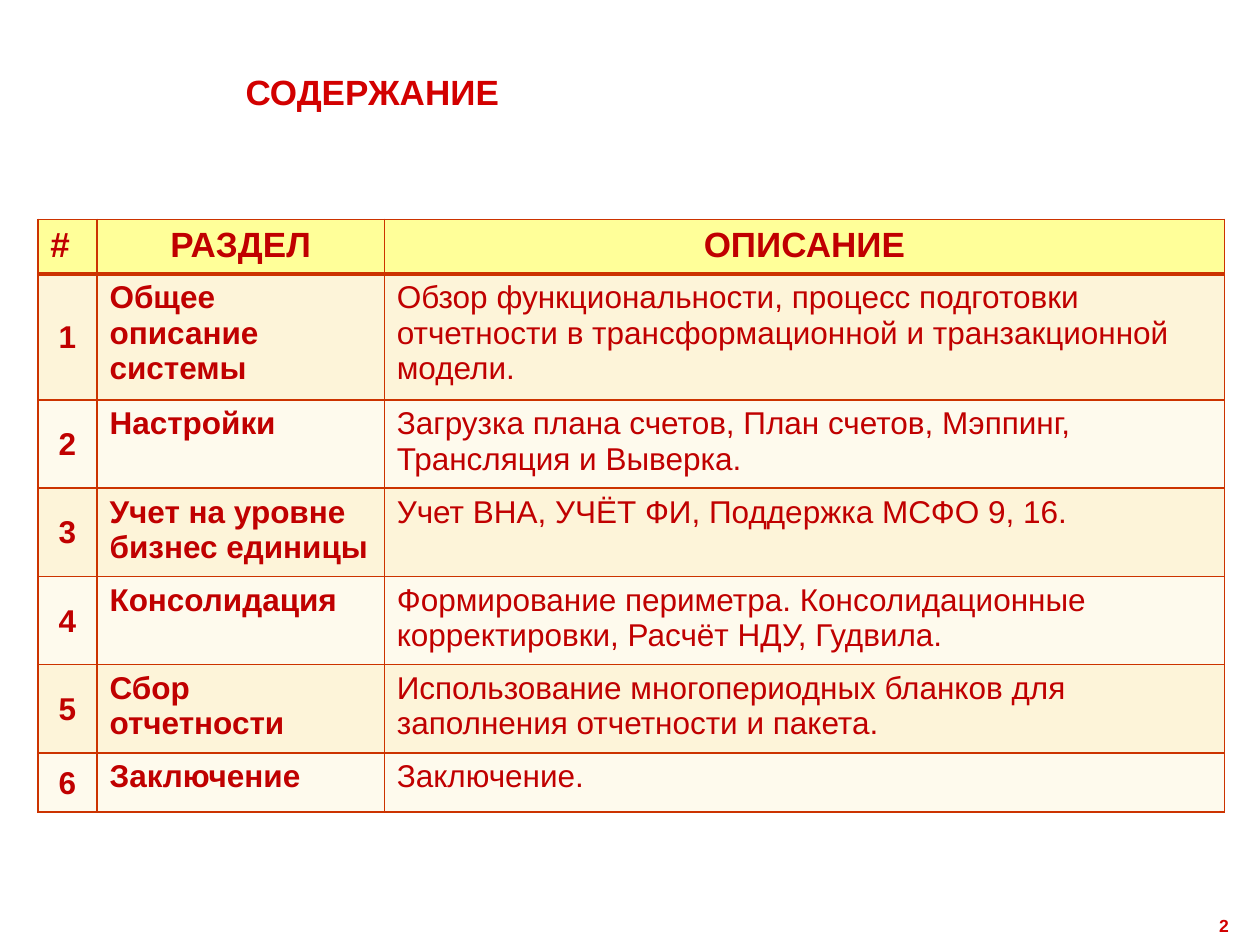
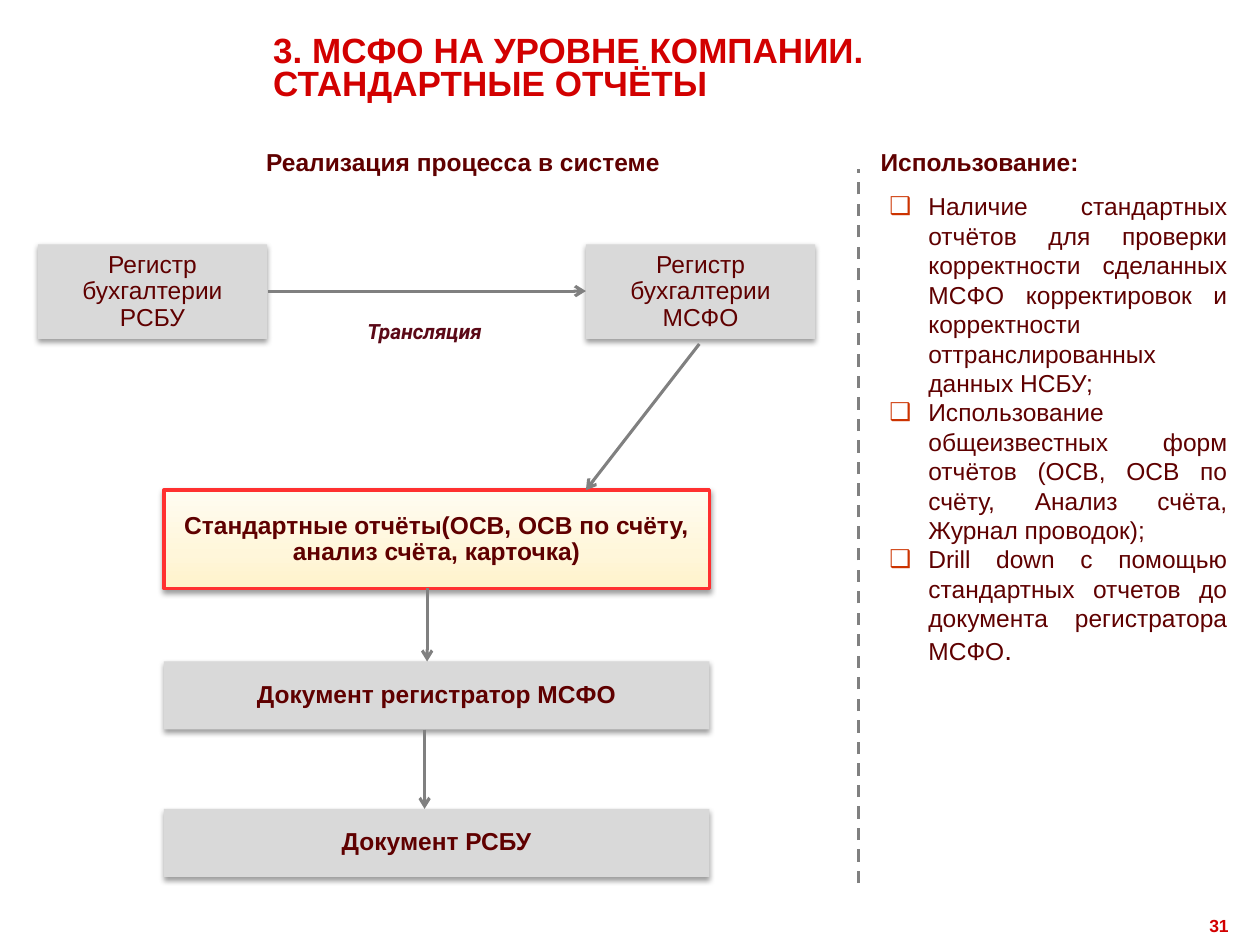
from copy import deepcopy

from lxml import etree
from pptx import Presentation
from pptx.dml.color import RGBColor
from pptx.enum.dml import MSO_LINE
from pptx.enum.shapes import MSO_CONNECTOR, MSO_SHAPE
from pptx.enum.text import MSO_ANCHOR, PP_ALIGN
from pptx.oxml.ns import qn
from pptx.util import Inches, Pt

LEFT, CENTER, RIGHT, JUSTIFY = PP_ALIGN.LEFT, PP_ALIGN.CENTER, PP_ALIGN.RIGHT, PP_ALIGN.JUSTIFY
TOP, MIDDLE = MSO_ANCHOR.TOP, MSO_ANCHOR.MIDDLE
STRAIGHT, RECTANGLE, DASH = MSO_CONNECTOR.STRAIGHT, MSO_SHAPE.RECTANGLE, MSO_LINE.DASH

RED, DARK_RED, BROWN, ORANGE = "D20000", "C00000", "5F0000", "CC3300"
GRAY, LINE_GRAY, FRAME_RED = "D9D9D9", "808080", "FF3030"
HEADER_FILL, BAND_FILLS = "FFFF99", ("FDF4D9", "FEFAED")
REPORT_GRADIENT = [(0, "FFF3CA"), (35, "FFF6DA"), (100, "FFFCF1")]

CONTENTS = {"title": "СОДЕРЖАНИЕ", "title_at": (1.85, 0.17, 5.28, 1.18), "number": "2"}
TABLE_LEFT, TABLE_TOP = 0.3, 1.74
COLUMN_WIDTHS = (0.47, 2.28, 6.67)
ROW_HEIGHTS = (0.41, 0.94, 0.66, 0.66, 0.66, 0.66, 0.47)
HEADINGS = ("#", "РАЗДЕЛ", "ОПИСАНИЕ")
SECTIONS = [
    ("Общее описание системы",
     "Обзор функциональности, процесс подготовки отчетности в трансформационной и транзакционной модели."),
    ("Настройки", "Загрузка плана счетов, План счетов, Мэппинг, Трансляция и Выверка."),
    ("Учет на уровне бизнес единицы", "Учет ВНА, УЧЁТ ФИ, Поддержка МСФО 9, 16."),
    ("Консолидация", "Формирование периметра. Консолидационные корректировки, Расчёт НДУ, Гудвила."),
    ("Сбор отчетности", "Использование многопериодных бланков для заполнения отчетности и пакета."),
    ("Заключение", "Заключение."),
]

REPORTS = {"title": "3. МСФО НА УРОВНЕ КОМПАНИИ. СТАНДАРТНЫЕ ОТЧЁТЫ",
           "title_at": (2.07, 0.12, 6.06, 0.87), "number": "31"}
SUBHEADINGS = [
    ("Реализация процесса в системе", (1.9, 1.12, 3.55, 0.34), CENTER),
    ("Использование:", (6.89, 1.12, 2.88, 0.34), LEFT),
]
REGISTERS = [
    ("Регистр бухгалтерии РСБУ", (0.3, 1.94, 1.82, 0.75)),
    ("Регистр бухгалтерии МСФО", (4.65, 1.94, 1.82, 0.75)),
]
STANDARD_REPORTS = ("Стандартные отчёты(ОСВ, ОСВ по счёту, анализ счёта, карточка)",
                    (1.3, 3.89, 4.33, 0.78))
DOCUMENTS = [
    ("Документ регистратор МСФО", (1.3, 5.25, 4.33, 0.54)),
    ("Документ РСБУ", (1.3, 6.42, 4.33, 0.54)),
]
ARROWS = [
    ((2.13, 2.31), (4.65, 2.31)),
    ((5.55, 2.73), (4.65, 3.89)),
    ((3.39, 4.67), (3.39, 5.25)),
    ((3.37, 5.79), (3.37, 6.42)),
]
DIVIDER = ((6.81, 7.01), (6.81, 1.34))
TRANSLATION = ("Трансляция", (2.48, 2.48, 1.78, 0.42))
USES_AT = (6.96, 1.47, 2.88, 4.52)
USES = [
    "Наличие стандартных отчётов для проверки корректности сделанных МСФО корректировок "
    "и корректности оттранслированных данных НСБУ;",
    "Использование общеизвестных форм отчётов (ОСВ, ОСВ по счёту, Анализ счёта, Журнал проводок);",
    "Drill down с помощью стандартных отчетов до документа регистратора МСФО",
]


def rgb(value):
    return RGBColor.from_string(value)


def inches(lengths):
    return [Inches(length) for length in lengths]


def add_xml(parent, tag, **attributes):
    return etree.SubElement(parent, qn(tag), {key: str(value) for key, value in attributes.items()})


def style_run(run, size, color, bold=False, italic=False, font="Arial"):
    run.font.name, run.font.size = font, Pt(size)
    run.font.bold, run.font.italic = bold, italic
    run.font.color.rgb = rgb(color)


def write(paragraph, text, size, color, align=LEFT, spacing=None, **style):
    paragraph.text = text
    paragraph.alignment = align
    if spacing:
        paragraph.line_spacing = spacing
    for run in paragraph.runs:
        style_run(run, size, color, **style)


def add_label(slide, text, at, size, color, anchor=TOP, **style):
    frame = slide.shapes.add_textbox(*inches(at)).text_frame
    frame.word_wrap = True
    frame.vertical_anchor = anchor
    write(frame.paragraphs[0], text, size, color, **style)


def add_slide(deck, page):
    slide = deck.slides.add_slide(deck.slide_layouts[6])
    add_label(slide, page["title"], page["title_at"], 20, RED, anchor=MIDDLE, spacing=0.8, bold=True)
    add_label(slide, page["number"], (9.01, 7.21, 0.84, 0.28), 10, RED, align=RIGHT, bold=True)
    return slide


def set_borders(cell, top, bottom):
    properties = cell._tc.get_or_add_tcPr()
    for tag, width in (("a:lnL", 1), ("a:lnR", 1), ("a:lnT", top), ("a:lnB", bottom)):
        border = add_xml(properties, tag, w=Pt(width))
        add_xml(add_xml(border, "a:solidFill"), "a:srgbClr", val=ORANGE)


def fill_cell(cell, row, column, text):
    header, number = row == 0, column == 0 and row > 0
    set_borders(cell, 3 if row == 1 else 1, 3 if header else 1)
    cell.fill.solid()
    cell.fill.fore_color.rgb = rgb(HEADER_FILL if header else BAND_FILLS[(row - 1) % 2])
    if number:
        cell.vertical_anchor = MIDDLE
        cell.margin_left = cell.margin_right = cell.margin_top = Inches(0.01)
        cell.margin_bottom = 0
    centered = number or (header and column > 0)
    write(cell.text_frame.paragraphs[0], text, 20 if header else 18, DARK_RED,
          align=CENTER if centered else LEFT, bold=header or column < 2)


def add_contents_table(slide):
    rows = [HEADINGS] + [(str(number), *section) for number, section in enumerate(SECTIONS, 1)]
    table_at = inches((TABLE_LEFT, TABLE_TOP, sum(COLUMN_WIDTHS), sum(ROW_HEIGHTS)))
    table = slide.shapes.add_table(len(rows), len(HEADINGS), *table_at).table
    for column, width in zip(table.columns, COLUMN_WIDTHS):
        column.width = Inches(width)
    for row, height in zip(table.rows, ROW_HEIGHTS):
        row.height = Inches(height)
    for r, texts in enumerate(rows):
        for c, text in enumerate(texts):
            fill_cell(table.cell(r, c), r, c, text)


def fill_gradient(shape, stops):
    shape.fill.gradient()
    shape.fill.gradient_angle = 90
    stop_list = next(shape._element.spPr.iter(qn("a:gsLst")))
    sample = deepcopy(stop_list[0])
    for child in list(stop_list) + list(sample):
        child.getparent().remove(child)
    for position, color in stops:
        stop = deepcopy(sample)
        stop.set("pos", str(position * 1000))
        add_xml(stop, "a:srgbClr", val=color)
        stop_list.append(stop)


def add_box(slide, text, at, bold=True, highlighted=False):
    box = slide.shapes.add_shape(RECTANGLE, *inches(at))
    if highlighted:
        fill_gradient(box, REPORT_GRADIENT)
        box.line.color.rgb = rgb(FRAME_RED)
        box.line.width = Pt(2)
    else:
        box.fill.solid()
        box.fill.fore_color.rgb = rgb(GRAY)
        box.line.fill.background()
    box.shadow.inherit = False
    shadow = add_xml(box._element.spPr.find(qn("a:effectLst")), "a:outerShdw",
                     blurRad=Pt(3.1), dist=Pt(1.6), dir=90 * 60000, rotWithShape=0)
    add_xml(add_xml(shadow, "a:srgbClr", val="000000"), "a:alpha", val=38000)
    frame = box.text_frame
    frame.word_wrap = True
    frame.vertical_anchor = MIDDLE
    write(frame.paragraphs[0], text, 14, BROWN, align=CENTER, spacing=0.9, bold=bold)


def add_line(slide, start, end, width):
    line = slide.shapes.add_connector(STRAIGHT, *inches(start + end))
    line.line.color.rgb = rgb(LINE_GRAY)
    line.line.width = Pt(width)
    add_xml(line._element.spPr, "a:effectLst")
    return line


def add_uses(slide):
    frame = slide.shapes.add_textbox(*inches(USES_AT)).text_frame
    frame.word_wrap = True
    for index, use in enumerate(USES):
        paragraph = frame.add_paragraph() if index else frame.paragraphs[0]
        properties = paragraph._p.get_or_add_pPr()
        properties.set("marL", str(Inches(0.31)))
        properties.set("indent", str(-Inches(0.31)))
        add_xml(add_xml(properties, "a:buClr"), "a:srgbClr", val=ORANGE)
        add_xml(properties, "a:buFont", typeface="Arial")
        add_xml(properties, "a:buChar", char="❑")
        write(paragraph, use, 14, BROWN, align=JUSTIFY)
    full_stop = paragraph.add_run()
    full_stop.text = "."
    style_run(full_stop, 16, BROWN)


def add_report_flow(slide):
    for text, at, align in SUBHEADINGS:
        add_label(slide, text, at, 14, BROWN, align=align, bold=True)
    add_line(slide, *DIVIDER, 1.75).line.dash_style = DASH
    add_box(slide, *STANDARD_REPORTS, highlighted=True)
    for document in DOCUMENTS:
        add_box(slide, *document)
    for register in REGISTERS:
        add_box(slide, *register, bold=False)
    for start, end in ARROWS:
        arrow = add_line(slide, start, end, 1.75)
        add_xml(arrow.line._get_or_add_ln(), "a:tailEnd", type="arrow")
    add_label(slide, *TRANSLATION, 12, "5B0917", align=CENTER, bold=True, italic=True, font="Roboto")
    add_uses(slide)


def main():
    deck = Presentation()
    deck.slide_width, deck.slide_height = Inches(10), Inches(7.5)
    add_contents_table(add_slide(deck, CONTENTS))
    add_report_flow(add_slide(deck, REPORTS))
    deck.save("out.pptx")


if __name__ == "__main__":
    main()
